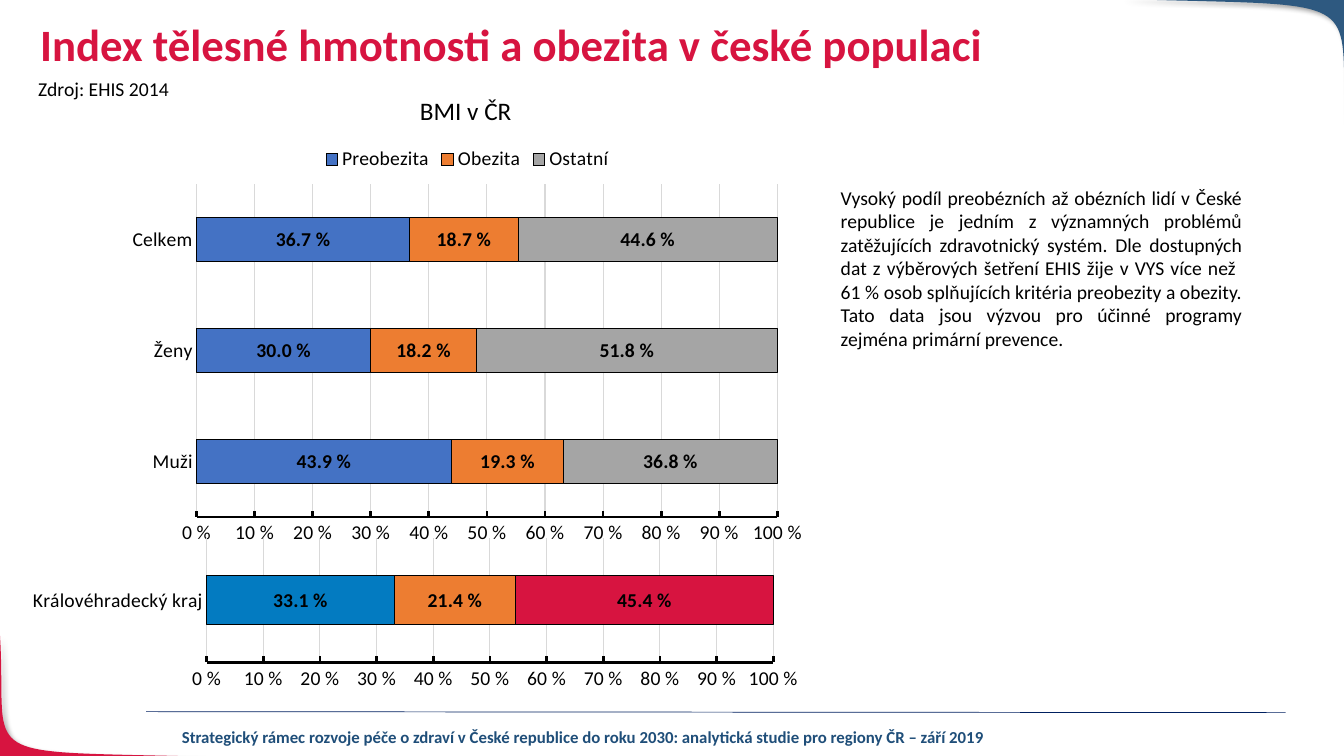
from pptx import Presentation
from pptx import util as u
from pptx.chart.data import CategoryChartData
from pptx.dml.color import RGBColor
from pptx.enum import chart as ch, shapes, text
from pptx.oxml import parse_xml
from pptx.oxml.ns import nsdecls, qn

COLORS = {
    "red": "D71440", "navy": "2E5980", "line": "002060", "foot": "1F4E79",
    "black": "000000", "grid": "D9D9D9", "blue": "4472C4",
    "orange": "ED7D31", "gray": "A5A5A5", "azure": "037BC1",
}


class Deck:
    font = "Calibri"

    def __init__(self):
        self.prs = Presentation()
        self.prs.slide_width = u.Inches(13.33)
        self.prs.slide_height = u.Inches(7.5)
        self.slide = self.prs.slides.add_slide(self.prs.slide_layouts[6])
        self.shapes = self.slide.shapes

    def color(self, name):
        return RGBColor.from_string(COLORS[name])

    def style(self, font, size, name="black", bold=False):
        font.name = self.font
        font.size = u.Pt(size)
        font.bold = bold
        font.color.rgb = self.color(name)

    def stroke(self, line, name, width):
        line.color.rgb = self.color(name)
        line.width = u.Pt(width)

    def corner(self, curve, tip, name):
        steps = 40
        points = []
        for i in range(steps + 1):
            t = i / steps
            parts = ((1 - t) ** 3, 3 * t * (1 - t) ** 2, 3 * t * t * (1 - t), t ** 3)
            points.append([u.Inches(sum(a * p[k] for a, p in zip(parts, curve))) for k in (0, 1)])
        points.append([u.Inches(v) for v in tip])
        build = self.shapes.build_freeform(*points[0])
        build.add_line_segments(points[1:], close=True)
        shape = build.convert_to_shape()
        shape.fill.solid()
        shape.fill.fore_color.rgb = self.color(name)
        shape.line.fill.background()
        shape._element.spPr.append(parse_xml(
            f'<a:effectLst {nsdecls("a")}><a:outerShdw blurRad="{u.Pt(4)}" dist="{u.Pt(3)}" '
            'dir="2700000" algn="tl" rotWithShape="0"><a:srgbClr val="000000">'
            '<a:alpha val="40000"/></a:srgbClr></a:outerShdw></a:effectLst>'))

    def rule(self, start, end, name, width):
        line = self.shapes.add_connector(
            shapes.MSO_CONNECTOR.STRAIGHT, *map(u.Inches, start + end))
        self.stroke(line.line, name, width)
        line._element.spPr.append(parse_xml(f'<a:effectLst {nsdecls("a")}/>'))

    def label(self, box, words, size, name="black", bold=False, align="LEFT", wrap=True, space=1.0):
        frame = self.shapes.add_textbox(*map(u.Inches, box)).text_frame
        frame.word_wrap = wrap
        para = frame.paragraphs[0]
        para.text = words
        para.alignment = text.PP_ALIGN[align]
        para.line_spacing = space
        for run in para.runs:
            self.style(run.font, size, name, bold)

    def place(self, node, index, box, spot, inner=False):
        old = node.find(qn("c:layout"))
        if old is not None:
            node.remove(old)
        left, top, width, height = box
        starts = (left, top, 0, 0)
        spans = (width, height, width, height)
        target = '<c:layoutTarget val="inner"/>' if inner else ""
        modes = '<c:xMode val="edge"/><c:yMode val="edge"/>'
        sizes = "".join(f'<c:{k} val="{(v - start) / span:.4f}"/>'
                        for k, v, start, span in zip("xywh", spot, starts, spans))
        node.insert(index, parse_xml(
            f'<c:layout {nsdecls("c")}><c:manualLayout>{target}{modes}{sizes}'
            '</c:manualLayout></c:layout>'))

    def bars(self, box, cats, series, plot, title=None):
        data = CategoryChartData()
        data.categories = cats
        for name, vals, _ in series:
            data.add_series(name, vals)
        chart = self.shapes.add_chart(
            ch.XL_CHART_TYPE.BAR_STACKED_100, *map(u.Inches, box), data).chart
        self.style(chart.font, 10)
        self.place(chart._chartSpace.chart.plotArea, 0, box, plot, True)
        chart.has_title = bool(title)
        chart.has_legend = bool(title)
        if title:
            frame = chart.chart_title.text_frame
            frame.text = title
            self.style(frame.paragraphs[0].runs[0].font, 18)
            self.place(chart.chart_title._element, 1, box, (4.12, 0.88))
            chart.legend.position = ch.XL_LEGEND_POSITION.TOP
            chart.legend.include_in_layout = False
            self.style(chart.legend.font, 14)
            self.place(chart.legend._element, 1, box, (3.17, 1.42))
        for axis, tick, name, width in (
                (chart.category_axis, "NONE", "grid", 0.75),
                (chart.value_axis, "INSIDE", "black", 2)):
            axis.major_tick_mark = ch.XL_TICK_MARK[tick]
            axis.minor_tick_mark = ch.XL_TICK_MARK.NONE
            self.style(axis.tick_labels.font, 14)
            self.stroke(axis.format.line, name, width)
        axis = chart.value_axis
        axis.minimum_scale, axis.maximum_scale, axis.major_unit = 0, 1, 0.1
        axis.tick_labels.number_format = '0" "%'
        axis.tick_labels.number_format_is_linked = False
        axis.has_major_gridlines = True
        self.stroke(axis.major_gridlines.format.line, "grid", 0.75)
        group = chart.plots[0]
        group.gap_width, group.overlap = 150, 100
        group.vary_by_categories = False
        for item, (_, _, name) in zip(group.series, series):
            item.format.fill.solid()
            item.format.fill.fore_color.rgb = self.color(name)
            self.stroke(item.format.line, "black", 0.75)
            tags = item.data_labels
            tags.show_value = True
            tags.position = ch.XL_LABEL_POSITION.CENTER
            tags.number_format = '0.0" "%'
            tags.number_format_is_linked = False
            self.style(tags.font, 14, bold=True)


def main():
    deck = Deck()
    deck.corner([(2.13, 7.51), (-0.34, 7.44), (0.08, 7.59), (0, 6.3)], (-0.01, 7.51), "red")
    deck.corner([(11.11, -0.01), (13.7, 0.07), (13.26, -0.1), (13.35, 1.42)], (13.35, -0.01), "navy")
    deck.rule((1.45, 7.06), (12.75, 7.07), "line", 0.5)
    deck.label((1.57, 7.16, 8.43, 0.3),
               "Strategický rámec rozvoje péče o zdraví v České republice do roku 2030: "
               "analytická studie pro regiony ČR – září 2019", 12, "foot", True, "CENTER")
    deck.label((0.28, 0.71, 1.51, 0.34), "Zdroj: EHIS 2014", 14, wrap=False)
    deck.label((8.24, 1.79, 4.18, 3.72),
               "Vysoký podíl preobézních až obézních lidí v České republice je jedním z "
               "významných problémů zatěžujících zdravotnický systém. Dle dostupných dat z "
               "výběrových šetření EHIS žije v VYS více než \v61 % osob splňujících kritéria "
               "preobezity a obezity. Tato data jsou výzvou pro účinné programy zejména "
               "primární prevence.", 14, align="JUSTIFY")
    deck.label((0.3, 0.18, 11.5, 0.69), "Index tělesné hmotnosti a obezita v české populaci",
               32, "red", True, space=0.9)
    deck.bars((1.18, 0.71, 6.92, 4.79), ["Muži", "Ženy", "Celkem"], [
        ("Preobezita", (0.439, 0.3, 0.367), "blue"),
        ("Obezita", (0.193, 0.182, 0.187), "orange"),
        ("Ostatní", (0.368, 0.518, 0.446), "gray"),
    ], (1.95, 1.83, 5.76, 3.3), "BMI v ČR")
    deck.bars((0.11, 5.03, 7.98, 1.88), ["Královéhradecký kraj"], [
        ("Series 1", (0.331,), "azure"),
        ("Series 2", (0.214,), "orange"),
        ("Series 3", (0.454,), "red"),
    ], (2.05, 5.34, 5.62, 1.23))
    deck.prs.save("out.pptx")


if __name__ == "__main__":
    main()
